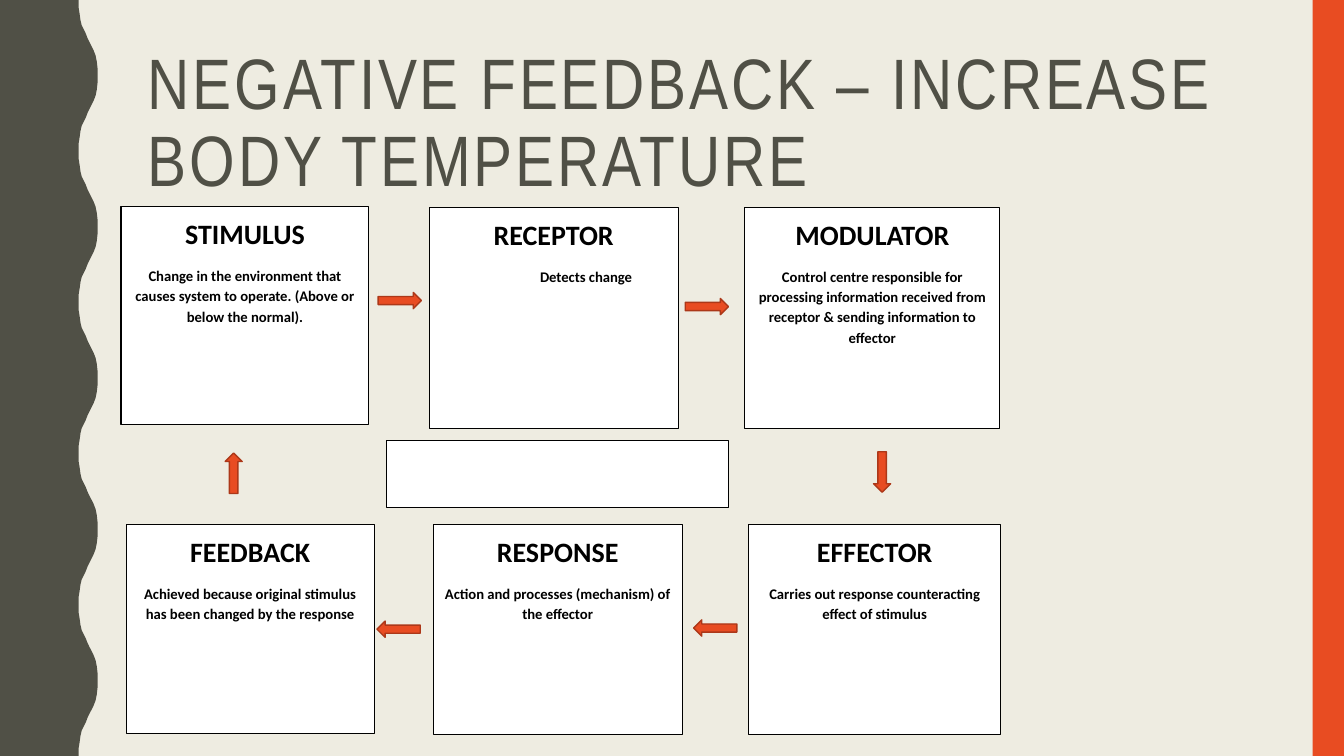
from dataclasses import dataclass

from pptx import Presentation
from pptx import util as u
from pptx.dml.color import RGBColor
from pptx.enum import shapes, text

CREAM, OLIVE, ORANGE, RUST = "EEECE1", "505046", "E84C22", "AC3819"
WHITE, BLACK = "FFFFFF", "000000"
SLIDE_WIDTH, SLIDE_HEIGHT = 33.87, 19.05
WAVE_COUNT = 5
WAVE_PERIOD = SLIDE_HEIGHT / WAVE_COUNT
HALF_WAVE = [
    (1.98, 0), (1.98, 0.18), (2.01, 0.36), (2.03, 0.51), (2.06, 0.64),
    (2.11, 0.74), (2.16, 0.84), (2.21, 0.97), (2.26, 1.07), (2.31, 1.17),
    (2.36, 1.27), (2.41, 1.4), (2.44, 1.55), (2.46, 1.73), (2.46, 1.9),
]


@dataclass
class Stage:
    heading: str
    detail: str
    left: float
    top: float
    width: float
    height: float
    indent: float = 0


@dataclass
class Arrow:
    left: float
    top: float
    rotation: int = 0
    width: float = 1.09
    height: float = 0.41


STAGES = [
    Stage("STIMULUS", "Change in the environment that causes system to operate. "
          "(Above or below the normal).", 3.05, 5.21, 6.25, 5.49),
    Stage("RECEPTOR", "Detects change", 10.82, 5.23, 6.27, 5.56, indent=2.54),
    Stage("MODULATOR", "Control centre responsible for processing information received "
          "from receptor & sending information to effector", 18.77, 5.23, 6.43, 5.56),
    Stage("EFFECTOR", "Carries out response counteracting effect of stimulus",
          18.87, 13.21, 6.35, 5.31),
    Stage("RESPONSE", "Action and processes (mechanism) of the effector",
          10.92, 13.21, 6.27, 5.31),
    Stage("FEEDBACK", "Achieved because original stimulus has been changed by the response",
          3.18, 13.21, 6.25, 5.28),
]
ARROWS = [
    Arrow(9.53, 7.37),
    Arrow(17.27, 7.52),
    Arrow(21.72, 11.68, 90, 1.02, 0.43),
    Arrow(17.48, 15.62, 180),
    Arrow(9.5, 15.65, 180),
    Arrow(5.38, 11.71, 270, 1.02, 0.43),
]


def color(value: str) -> RGBColor:
    return RGBColor.from_string(value)


def paint(shape, fill: str, line: str | None = None, weight: float = 0.75) -> None:
    shape.shadow.inherit = False
    shape.fill.solid()
    shape.fill.fore_color.rgb = color(fill)
    if line is None:
        shape.line.fill.background()
    else:
        shape.line.color.rgb = color(line)
        shape.line.width = u.Pt(weight)


def add_box(slide, left: float, top: float, width: float, height: float,
            kind=shapes.MSO_SHAPE.RECTANGLE):
    return slide.shapes.add_shape(kind, u.Cm(left), u.Cm(top), u.Cm(width), u.Cm(height))


def add_wave(slide) -> None:
    full_wave = HALF_WAVE + [(x, WAVE_PERIOD - y) for x, y in reversed(HALF_WAVE)]
    edge = [(x, y + wave * WAVE_PERIOD) for wave in range(WAVE_COUNT) for x, y in full_wave]
    builder = slide.shapes.build_freeform(0, 0)
    builder.add_line_segments([(u.Cm(x), u.Cm(y)) for x, y in edge + [(0, SLIDE_HEIGHT)]])
    paint(builder.convert_to_shape(), OLIVE)


def add_title(slide, title: str) -> None:
    box = slide.shapes.add_textbox(u.Cm(3.48), u.Cm(1.07), u.Cm(28.27), u.Cm(4.14))
    frame = box.text_frame
    frame.word_wrap = True
    frame.vertical_anchor = text.MSO_ANCHOR.MIDDLE
    paragraph = frame.paragraphs[0]
    paragraph.text = title
    paragraph.line_spacing = 0.9
    paragraph.font.name = "Arial Narrow"
    paragraph.font.size = u.Pt(51)
    paragraph.font.color.rgb = color(OLIVE)
    paragraph.runs[0].font._element.set("spc", "200")


def add_stage(slide, stage: Stage) -> None:
    shape = add_box(slide, stage.left, stage.top, stage.width, stage.height)
    paint(shape, WHITE, BLACK)
    frame = shape.text_frame
    frame.word_wrap = True
    frame.vertical_anchor = text.MSO_ANCHOR.TOP
    frame.text = f"{stage.heading}\n{stage.detail}"
    for paragraph, size in zip(frame.paragraphs, (20, 10.5)):
        paragraph.alignment = text.PP_ALIGN.CENTER
        paragraph.line_spacing = 1.15
        paragraph.space_after = u.Pt(10)
        paragraph.font.name = "Calibri"
        paragraph.font.size = u.Pt(size)
        paragraph.font.bold = True
        paragraph.font.color.rgb = color(BLACK)
    if stage.indent:
        detail = frame.paragraphs[1]
        detail.alignment = text.PP_ALIGN.LEFT
        detail._p.get_or_add_pPr().set("marL", str(u.Cm(stage.indent)))


def add_arrow(slide, arrow: Arrow) -> None:
    shape = add_box(slide, arrow.left, arrow.top, arrow.width, arrow.height,
                    shapes.MSO_SHAPE.RIGHT_ARROW)
    shape.rotation = arrow.rotation
    paint(shape, ORANGE, RUST, 1)


def main() -> None:
    presentation = Presentation()
    presentation.slide_width = u.Cm(SLIDE_WIDTH)
    presentation.slide_height = u.Cm(SLIDE_HEIGHT)
    slide = presentation.slides.add_slide(presentation.slide_layouts[6])
    slide.background.fill.solid()
    slide.background.fill.fore_color.rgb = color(CREAM)

    add_wave(slide)
    paint(add_box(slide, 33.08, 0, 0.79, SLIDE_HEIGHT), ORANGE)
    add_title(slide, "NEGATIVE FEEDBACK – INCREASE BODY TEMPERATURE")
    for stage in STAGES:
        add_stage(slide, stage)
    paint(add_box(slide, 9.73, 11.1, 8.64, 1.68), WHITE, BLACK)
    for arrow in ARROWS:
        add_arrow(slide, arrow)

    presentation.save("out.pptx")


if __name__ == "__main__":
    main()
